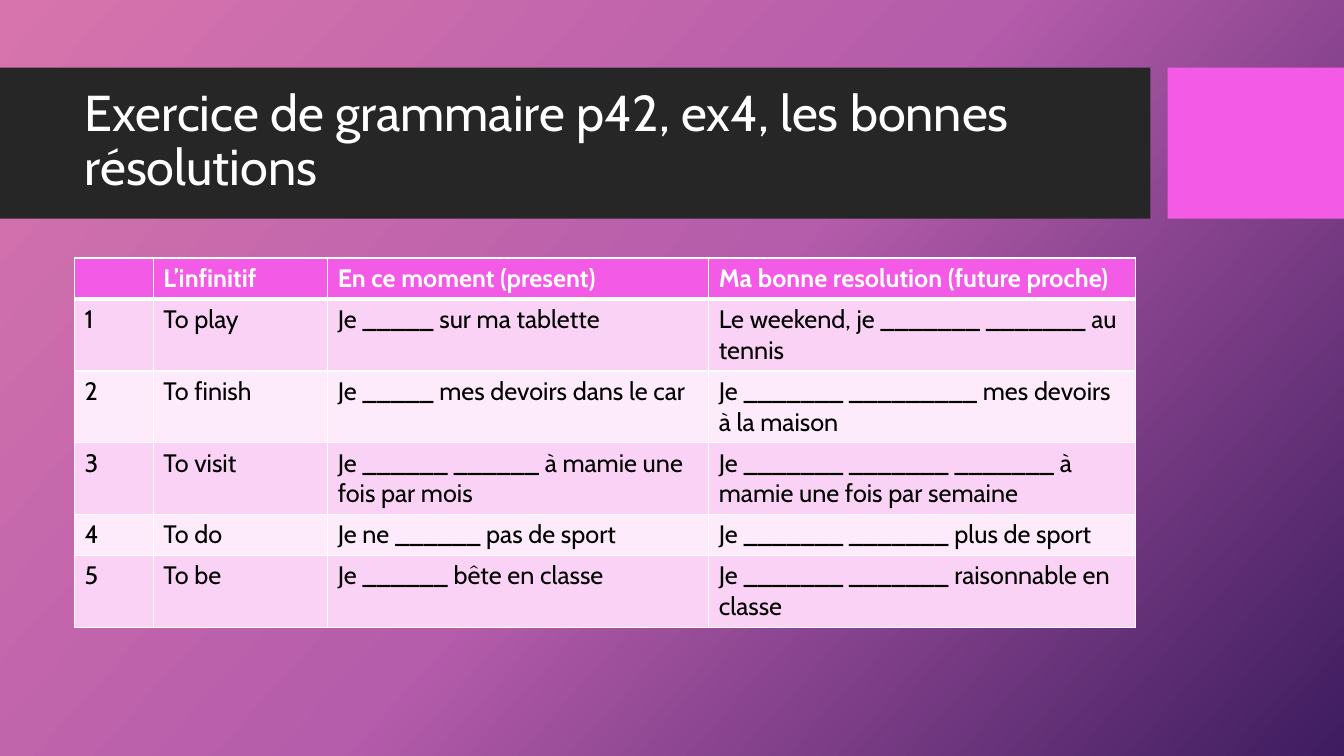
from lxml import etree
from pptx import Presentation
from pptx.dml.color import RGBColor
from pptx.enum.shapes import MSO_SHAPE
from pptx.enum.text import MSO_ANCHOR, MSO_AUTO_SIZE, PP_ALIGN
from pptx.oxml import parse_xml
from pptx.oxml.ns import nsdecls, qn
from pptx.util import Inches, Pt

RECTANGLE = MSO_SHAPE.RECTANGLE
MIDDLE = MSO_ANCHOR.MIDDLE
NO_AUTOFIT = MSO_AUTO_SIZE.NONE
LEFT = PP_ALIGN.LEFT

FONT = "Cabin"
WHITE = RGBColor(0xFF, 0xFF, 0xFF)
BLACK = RGBColor(0x00, 0x00, 0x00)
CHARCOAL = RGBColor(0x26, 0x26, 0x26)
PINK = RGBColor(0xF3, 0x5A, 0xE6)
BAND_COLORS = (RGBColor(0xFA, 0xD2, 0xF5), RGBColor(0xFD, 0xEA, 0xFA))
GRADIENT = (
    (0, RGBColor(0xD7, 0x74, 0xAD)),
    (50, RGBColor(0xB5, 0x5C, 0xAB)),
    (100, RGBColor(0x3E, 0x1C, 0x5F)),
)
GRADIENT_ANGLE = 42

TITLE = "Exercice de grammaire p42, ex4, les bonnes résolutions"
COLUMN_WIDTHS = (0.78, 1.73, 3.78, 4.23)
ROW_HEIGHT = 0.41
ROWS = (
    ("", "L’infinitif", "En ce moment (present)", "Ma bonne resolution (future proche)"),
    ("1", "To play", "Je _____ sur ma tablette", "Le weekend, je _______ _______ au tennis"),
    ("2", "To finish", "Je _____ mes devoirs dans le car",
     "Je _______ _________ mes devoirs à la maison"),
    ("3", "To visit", "Je ______ ______ à mamie une fois par mois",
     "Je _______ _______ _______ à mamie une fois par semaine"),
    ("4", "To do", "Je ne ______ pas de sport", "Je _______ _______ plus de sport"),
    ("5", "To be", "Je ______ bête en classe", "Je _______ _______ raisonnable en classe"),
)


def set_gradient_background(slide):
    stops = "".join(
        f'<a:gs pos="{percent * 1000}"><a:srgbClr val="{color}"/></a:gs>'
        for percent, color in GRADIENT
    )
    background = parse_xml(
        f'<p:bg {nsdecls("p", "a")}><p:bgPr><a:gradFill rotWithShape="1">'
        f'<a:gsLst>{stops}</a:gsLst><a:lin ang="{GRADIENT_ANGLE * 60000}" scaled="0"/>'
        "</a:gradFill><a:effectLst/></p:bgPr></p:bg>"
    )
    slide.element.cSld.insert(0, background)


def add_band(slide, left, width, color):
    band = slide.shapes.add_shape(
        RECTANGLE, Inches(left), Inches(0.67), Inches(width), Inches(1.5)
    )
    band.shadow.inherit = False
    band.fill.solid()
    band.fill.fore_color.rgb = color
    band.line.fill.background()


def style_paragraph(para, size, color, bold=False):
    para.font.name = FONT
    para.font.size = Pt(size)
    para.font.color.rgb = color
    para.font.bold = bold


def place_title(slide):
    """Fill the title placeholder and bring it in front of the bands."""
    title = slide.shapes.title
    title.left, title.top = Inches(0.74), Inches(0.82)
    title.width, title.height = Inches(10.51), Inches(1.18)
    frame = title.text_frame
    frame.text = TITLE
    frame.word_wrap = True
    frame.auto_size = NO_AUTOFIT
    frame.vertical_anchor = MIDDLE
    para = frame.paragraphs[0]
    para.alignment = LEFT
    para.line_spacing = 0.9
    style_paragraph(para, 36, WHITE)
    slide.shapes.element.append(title.element)


def set_borders(cell, bottom_width):
    properties = cell._tc.get_or_add_tcPr()
    widths = {"a:lnL": 1, "a:lnR": 1, "a:lnT": 1, "a:lnB": bottom_width}
    for position, (tag, width) in enumerate(widths.items()):
        line = etree.Element(qn(tag), w=str(Pt(width)))
        fill = etree.SubElement(line, qn("a:solidFill"))
        etree.SubElement(fill, qn("a:srgbClr"), val=str(WHITE))
        properties.insert(position, line)


def add_exercise_table(slide):
    table = slide.shapes.add_table(
        len(ROWS), len(COLUMN_WIDTHS), Inches(0.74), Inches(2.56),
        Inches(sum(COLUMN_WIDTHS)), Inches(ROW_HEIGHT * len(ROWS)),
    ).table
    for column, width in zip(table.columns, COLUMN_WIDTHS):
        column.width = Inches(width)
    for row_index, texts in enumerate(ROWS):
        table.rows[row_index].height = Inches(ROW_HEIGHT)
        is_header = row_index == 0
        for column_index, text in enumerate(texts):
            cell = table.cell(row_index, column_index)
            cell.text = text
            cell.fill.solid()
            cell.fill.fore_color.rgb = PINK if is_header else BAND_COLORS[(row_index - 1) % 2]
            set_borders(cell, 3 if is_header else 1)
            style_paragraph(
                cell.text_frame.paragraphs[0], 18, WHITE if is_header else BLACK, is_header
            )


def main():
    deck = Presentation()
    deck.slide_width, deck.slide_height = Inches(13.33), Inches(7.5)
    slide = deck.slides.add_slide(deck.slide_layouts.get_by_name("Title Only"))
    set_gradient_background(slide)
    add_band(slide, 0, 11.41, CHARCOAL)
    add_band(slide, 11.58, 1.75, PINK)
    place_title(slide)
    add_exercise_table(slide)
    deck.save("out.pptx")


if __name__ == "__main__":
    main()
